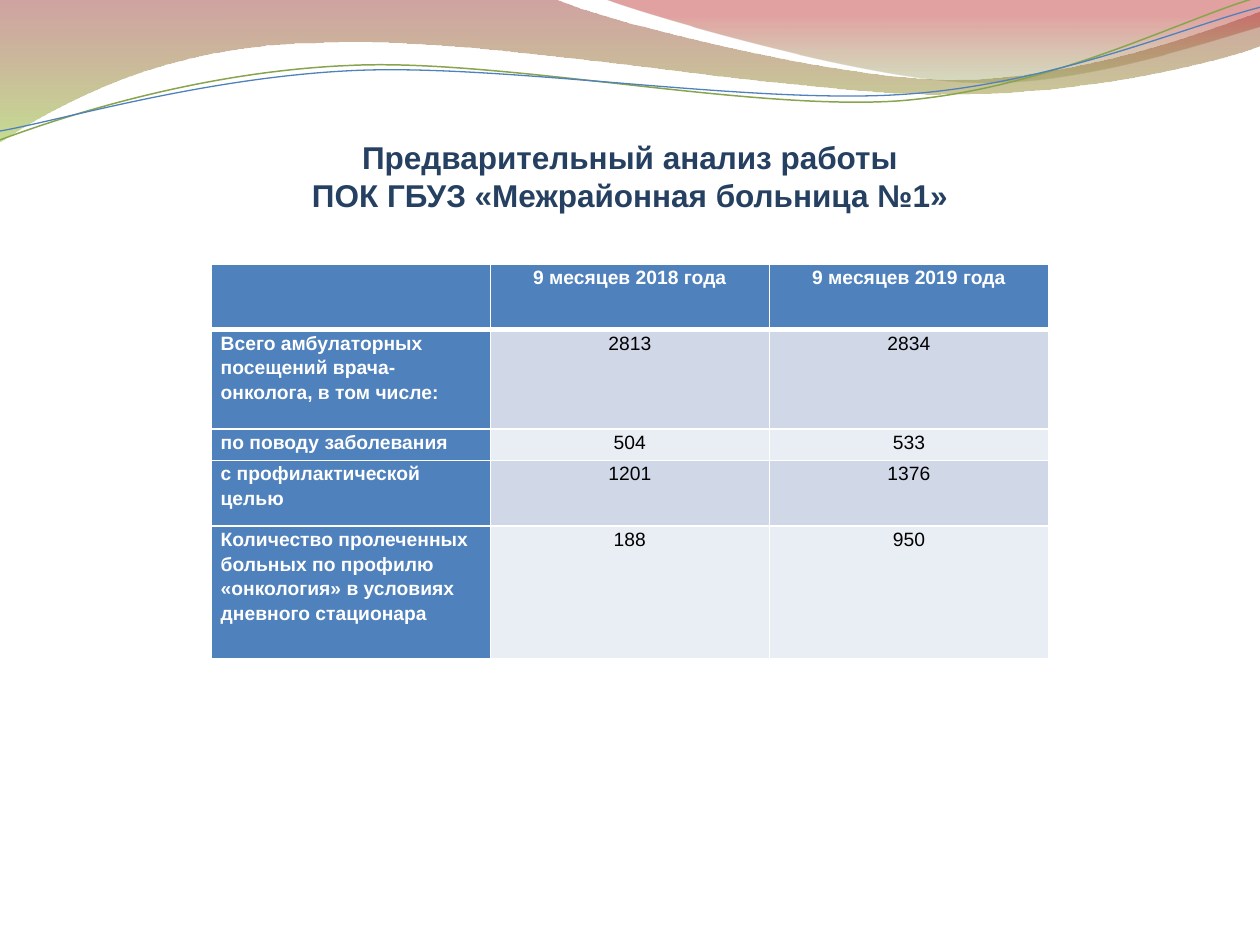
from lxml import etree
from pptx import Presentation
from pptx.dml.color import RGBColor
from pptx.enum.text import MSO_ANCHOR, PP_ALIGN
from pptx.oxml.ns import qn
from pptx.util import Pt

LEFT, CENTER = PP_ALIGN.LEFT, PP_ALIGN.CENTER
TOP, MIDDLE = MSO_ANCHOR.TOP, MSO_ANCHOR.MIDDLE

TITLE_BLUE = RGBColor(0x25, 0x40, 0x61)
BLUE = RGBColor(0x4F, 0x81, 0xBD)
BAND_DARK = RGBColor(0xD0, 0xD8, 0xE8)
BAND_LIGHT = RGBColor(0xE9, 0xED, 0xF4)
WHITE = RGBColor(0xFF, 0xFF, 0xFF)
BLACK = RGBColor(0, 0, 0)
DARK_RED = RGBColor(0x97, 0x33, 0x30)
RED = RGBColor(0xBE, 0x33, 0x30)
LIME = RGBColor(0x95, 0xC2, 0x38)
OLIVE = RGBColor(0x76, 0x95, 0x37)
LINE_GREEN = RGBColor(0x88, 0xA5, 0x4E)

# Each outline is a start point, then segments: one point is a line, three a curve.
WIDE_WAVE = ((0, -0.7), [
    [(316.8, -0.7)],
    [(342.7, 11.5), (477.4, 45.4), (545.8, 45.4)],
    [(614.2, 45.4), (689.8, 18), (720, 6.5)],
    [(720.7, 25.9)],
    [(707.8, 31.7), (626.4, 54.7), (537.1, 54)],
    [(447.8, 54), (275, 20.2), (185, 24.5)],
    [(92.9, 25.2), (33.1, 59.8), (-0.7, 81.4)],
])
SHORT_WAVE = ((344.9, -0.7), [
    [(366.5, 7.9), (491, 44.6), (553.7, 46.8)],
    [(615.6, 49.7), (691.9, 23), (720, 15.1)],
    [(720, 0)],
])
GREEN_CURVE = ((-1.4, 63), [
    [(33.8, 51.7), (114.1, 29.4), (199.8, 29.9)],
    [(284.9, 29.6), (425.9, 66.6), (512.4, 64.9)],
    [(599, 62.4), (676.5, 25.7), (720.2, 15.5)],
])
BLUE_CURVE = ((-1.1, 57.9), [
    [(32.9, 53.7), (118.3, 32.5), (204.1, 32.9)],
    [(290.6, 33.4), (428.9, 63.1), (515.5, 61.3)],
    [(601.3, 59.6), (678.5, 30), (721.4, 21.2)],
])
CURVE_ROTATION = 357.3

ROWS = [
    ["", "9 месяцев 2018 года", "9 месяцев 2019 года"],
    ["Всего амбулаторных посещений врача-онколога, в том числе:", "2813", "2834"],
    ["по поводу заболевания", "504", "533"],
    ["с профилактической целью", "1201", "1376"],
    ["Количество пролеченных больных по профилю «онкология» "
     "в условиях дневного стационара", "188", "950"],
]
ROW_HEIGHTS = [37.5, 56.7, 18, 37.5, 76]
COLUMN_WIDTH = 159.5


def set_all(target, values):
    for name, value in values.items():
        setattr(target, name, value)


class SlideBuilder:
    font_name = "Arial"
    table_size = Pt(11)

    def __init__(self, presentation):
        self.slide = presentation.slides.add_slide(presentation.slide_layouts[5])

    def format_runs(self, paragraph, size, color, bold):
        for run in paragraph.runs:
            set_all(run.font, {"name": self.font_name, "size": size, "bold": bold})
            run.font.color.rgb = color

    def outline(self, path, closed):
        """Add a freeform and merge each three-point segment into one Bézier curve."""
        start, segments = path
        builder = self.slide.shapes.build_freeform(Pt(start[0]), Pt(start[1]))
        points = [(Pt(x), Pt(y)) for segment in segments for x, y in segment]
        builder.add_line_segments(points, close=closed)
        shape = builder.convert_to_shape()
        shape.shadow.inherit = False
        lines = iter(list(shape._element.iter(qn("a:lnTo"))))
        for segment in segments:
            first, *others = [next(lines) for _ in segment]
            if others:
                first.tag = qn("a:cubicBezTo")
            for line in others:
                first.append(line[0])
                line.getparent().remove(line)
        return shape

    def wave(self, path, angle, stops):
        """Add a filled wave; stops are (position, colour, opacity in percent)."""
        shape = self.outline(path, True)
        shape.line.fill.background()
        shape.fill.gradient()
        shape.fill.gradient_angle = angle
        for stop, (position, color, _) in zip(shape.fill.gradient_stops, stops):
            stop.position = position
            stop.color.rgb = color
        colors = list(shape._element.iter(qn("a:srgbClr")))
        for element, (_, _, opacity) in zip(colors, stops):
            etree.SubElement(element, qn("a:alpha"), val=str(opacity * 1000))

    def curve(self, path, color, width):
        shape = self.outline(path, False)
        shape.rotation = CURVE_ROTATION
        shape.fill.background()
        shape.line.color.rgb = color
        shape.line.width = Pt(width)

    def title(self, text):
        title = self.slide.shapes.title
        set_all(title, {"left": Pt(36), "top": Pt(44.6), "width": Pt(648), "height": Pt(111.6)})
        frame = title.text_frame
        set_all(frame, {"margin_left": 0, "margin_right": 0, "margin_top": 0,
                        "margin_bottom": 0, "vertical_anchor": MIDDLE, "word_wrap": True})
        paragraph = frame.paragraphs[0]
        paragraph.text = text
        paragraph.alignment = CENTER
        self.format_runs(paragraph, Pt(18), TITLE_BLUE, True)

    def borders(self, cell, widths):
        properties = cell._tc.get_or_add_tcPr()
        for side, width in widths.items():
            line = etree.SubElement(properties, qn(f"a:ln{side}"), w=str(Pt(width)))
            fill = etree.SubElement(line, qn("a:solidFill"))
            etree.SubElement(fill, qn("a:srgbClr"), val=str(WHITE))

    def table(self, rows, left, top):
        columns = len(rows[0])
        table = self.slide.shapes.add_table(
            len(rows), columns, Pt(left), Pt(top),
            Pt(COLUMN_WIDTH * columns), Pt(sum(ROW_HEIGHTS))).table
        set_all(table, {"first_row": False, "horz_banding": False})
        for column in table.columns:
            column.width = Pt(COLUMN_WIDTH)
        for row_index, texts in enumerate(rows):
            table.rows[row_index].height = Pt(ROW_HEIGHTS[row_index])
            for column_index, text in enumerate(texts):
                self.cell(table.cell(row_index, column_index), text, row_index, column_index)

    def cell(self, cell, text, row, column):
        heading = row == 0 or column == 0
        self.borders(cell, {"L": 1, "R": 1, "T": 3 if row == 1 else 1, "B": 3 if row == 0 else 1})
        cell.fill.solid()
        cell.fill.fore_color.rgb = BLUE if heading else BAND_DARK if row % 2 else BAND_LIGHT
        set_all(cell, {"margin_left": Pt(5.4), "margin_right": Pt(5.4), "margin_top": 0,
                       "margin_bottom": 0, "vertical_anchor": TOP})
        paragraph = cell.text_frame.paragraphs[0]
        paragraph.text = text
        set_all(paragraph, {"alignment": CENTER if column else LEFT, "line_spacing": 1.15})
        self.format_runs(paragraph, self.table_size, WHITE if heading else BLACK, heading)


def main():
    presentation = Presentation()
    set_all(presentation, {"slide_width": Pt(720), "slide_height": Pt(540)})
    builder = SlideBuilder(presentation)
    builder.wave(WIDE_WAVE, 270, [(0, DARK_RED, 45), (1, LIME, 55)])
    builder.wave(SHORT_WAVE, 90, [(0, OLIVE, 30), (0.8, RED, 45)])
    builder.curve(GREEN_CURVE, LINE_GREEN, 0.85)
    builder.curve(BLUE_CURVE, BLUE, 0.75)
    builder.title("Предварительный анализ работы\vПОК ГБУЗ «Межрайонная больница №1»")
    builder.table(ROWS, 120.7, 150.9)
    presentation.save("out.pptx")


if __name__ == "__main__":
    main()
